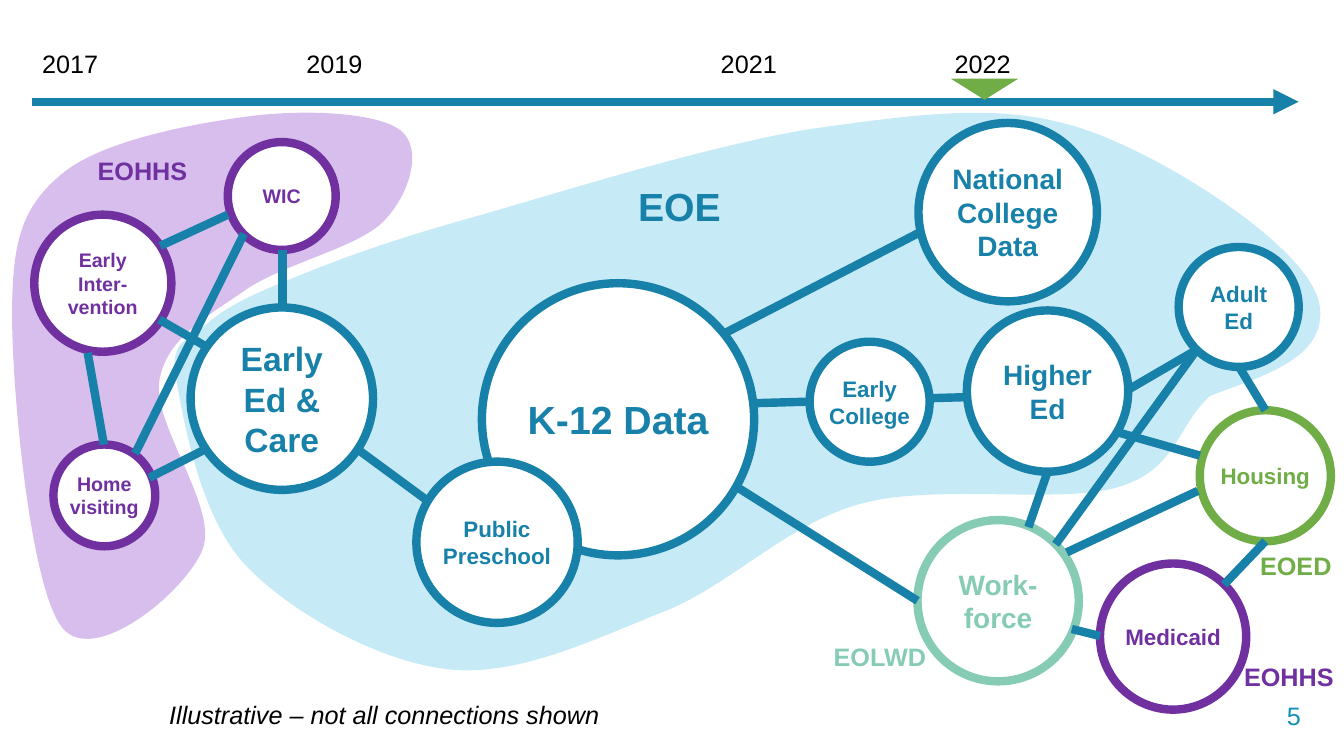
from lxml.etree import SubElement
from pptx import Presentation
from pptx.dml.color import RGBColor
from pptx.enum.shapes import MSO_CONNECTOR, MSO_SHAPE
from pptx.enum.text import MSO_ANCHOR, PP_ALIGN
from pptx.oxml.ns import qn
from pptx.util import Inches, Pt

BLUE, PURPLE, GREEN, MINT = "1781A9", "7030A0", "70AD47", "86CCB5"
RULE_BLUE, BLACK, WHITE = "1590BB", "000000", "FFFFFF"
LINE_WIDTH = 6

EOE_BOX = (1.73, 1.12, 11.36, 5.53)
EOE_START = (1.75, 3.77)
EOE_CURVES = [
    ((1.68, 3.38), (1.84, 3.4), (2.02, 3.24)),
    ((2.2, 3.08), (2.39, 2.97), (2.83, 2.79)),
    ((3.27, 2.61), (3.75, 2.42), (4.64, 2.17)),
    ((5.53, 1.92), (7.15, 1.4), (8.18, 1.26)),
    ((9.21, 1.12), (10.01, 1.01), (10.83, 1.31)),
    ((11.65, 1.61), (13.02, 2.49), (13.09, 3.04)),
    ((13.17, 3.59), (12.41, 3.76), (12, 3.93)),
    ((11.67, 4.23), (11.68, 4.65), (11.1, 4.83)),
    ((10.52, 5.01), (9.28, 4.79), (8.53, 5)),
    ((7.78, 5.21), (7.26, 5.8), (6.58, 6.07)),
    ((5.9, 6.34), (5.13, 6.72), (4.44, 6.64)),
    ((3.75, 6.56), (2.88, 6.08), (2.43, 5.6)),
    ((1.98, 5.12), (1.82, 4.16), (1.75, 3.77)),
]
EOHHS_BOX = (0.12, 1.12, 3.97, 5.22)
EOHHS_START = (3.8, 2.2)
EOHHS_CURVES = [
    ((3.54, 2.46), (2.8, 2.62), (2.43, 2.88)),
    ((2.06, 3.14), (1.65, 3.35), (1.58, 3.78)),
    ((1.51, 4.21), (2.17, 5.04), (2.01, 5.45)),
    ((1.85, 5.86), (0.94, 6.62), (0.62, 6.23)),
    ((0.3, 5.84), (0.12, 3.88), (0.12, 3.13)),
    ((0.12, 2.38), (0.22, 2.05), (0.62, 1.72)),
    ((1.02, 1.39), (1.94, 1.22), (2.5, 1.15)),
    ((3.06, 1.08), (3.77, 1.12), (3.98, 1.3)),
    ((4.2, 1.48), (4.06, 1.94), (3.8, 2.2)),
]
CORE_CIRCLES = [
    ("K-12 Data", 4.78, 2.81, 2.7, 28, BLUE),
    ("Work-force", 9.1, 5.16, 1.6, 20, MINT),
    ("Early Ed & Care", 1.89, 3.05, 1.81, 24, BLUE),
    ("Early Inter-vention", 0.34, 2.13, 1.36, 14, PURPLE),
    ("Home visiting", 0.53, 4.41, 1.01, 14, PURPLE),
    ("WIC", 2.26, 1.41, 1.07, 14, PURPLE),
    ("Public Preschool", 4.13, 4.58, 1.6, 16, BLUE),
]
CORE_LINKS = [
    (2.8, 2.48, 2.8, 3.05), (1.58, 3.17, 2.03, 3.43),
    (1.48, 4.74, 2.03, 4.46), (3.55, 4.46, 4.23, 4.96),
    (7.18, 3.31, 9.21, 2.26), (7.29, 4.82, 9.1, 5.96),
    (7.48, 4, 9.59, 3.94), (10.2, 5.23, 10.39, 4.68),
]
OUTER_CIRCLES = [
    ("National College\nData", 9.11, 1.22, 1.77, 20, BLUE),
    ("Higher Ed", 9.59, 3.08, 1.6, 20, BLUE),
    ("Early College", 8.03, 3.39, 1.19, 16, BLUE),
    ("Adult Ed", 11.69, 2.45, 1.19, 16, BLUE),
    ("Housing", 11.9, 4.07, 1.3, 16, GREEN),
    ("Medicaid", 10.91, 5.59, 1.45, 16, PURPLE),
]
OUTER_LINKS = [
    (11.2, 3.86, 11.87, 3.47), (11.09, 4.29, 11.9, 4.52),
    (10.63, 6.24, 10.91, 6.31), (10.58, 5.48, 11.88, 4.87),
    (10.47, 5.4, 11.87, 3.47), (12.55, 4.07, 12.29, 3.64),
    (12.14, 5.8, 12.55, 5.37), (2.26, 2.13, 1.59, 2.44),
    (0.87, 3.5, 1.03, 4.41), (2.42, 2.32, 1.34, 4.5),
]
AGENCIES = [
    ("EOHHS", 0.87, 1.49, 1.11, 0.4, 18, PURPLE),
    ("EOLWD", 8.17, 6.31, 1.23, 0.4, 18, MINT),
    ("EOED", 12.4, 5.41, 1.06, 0.4, 18, GREEN),
    ("EOHHS", 12.24, 6.51, 1.23, 0.4, 18, PURPLE),
    ("EOE", 6.23, 1.76, 1.21, 0.57, 28, BLUE),
]
YEARS = [("2017", 0), ("2019", 2.62), ("2021", 6.73), ("2022", 9.05)]


def color(value):
    """Turn a hex string into a colour."""
    return RGBColor.from_string(value)


def write(shape, text, size=18, ink=BLACK, bold=False, italic=False,
          align=PP_ALIGN.LEFT, anchor=MSO_ANCHOR.TOP, wrap=True):
    """Fill a shape with formatted text, one paragraph per line."""
    frame = shape.text_frame
    frame.word_wrap = wrap
    frame.vertical_anchor = anchor
    for index, line in enumerate(text.split("\n")):
        para = frame.paragraphs[0] if index == 0 else frame.add_paragraph()
        para.alignment = align
        span = para.add_run()
        span.text = line
        font = span.font
        font.name, font.size, font.bold, font.italic = "Arial", Pt(size), bold, italic
        font.color.rgb = color(ink)


def label(page, box, text, **style):
    """Place a text box."""
    shape = page.shapes.add_textbox(*map(Inches, box))
    write(shape, text, **style)


def paint(shape, fill, line=None, width=LINE_WIDTH):
    """Give a shape a flat fill and an optional outline."""
    shape.shadow.inherit = False
    shape.fill.solid()
    shape.fill.fore_color.rgb = color(fill)
    if line:
        shape.line.color.rgb = color(line)
        shape.line.width = Pt(width)
    else:
        shape.line.fill.background()


def link(page, begin_x, begin_y, end_x, end_y, arrow=False):
    """Draw a thick blue connector, with an optional arrowhead."""
    ends = map(Inches, (begin_x, begin_y, end_x, end_y))
    line = page.shapes.add_connector(MSO_CONNECTOR.STRAIGHT, *ends)
    line.line.color.rgb = color(BLUE)
    line.line.width = Pt(LINE_WIDTH)
    if arrow:
        SubElement(line.line._get_or_add_ln(), qn("a:tailEnd"), type="triangle")
    SubElement(line._element.spPr, qn("a:effectLst"))


def blob(page, box, start, curves, fill):
    """Draw a closed outline of cubic curves that fills the box."""
    left, top, width, height = map(Inches, box)
    right, bottom = left + width, top + height
    builder = page.shapes.build_freeform(left, top, scale=1.0)
    builder.add_line_segments([(right, top), (right, bottom), (left, bottom)])
    shape = builder.convert_to_shape()
    outline = next(shape._element.iter(qn("a:path")))
    for child in list(outline):
        outline.remove(child)
    steps = [("a:moveTo", [start])] + [("a:cubicBezTo", curve) for curve in curves]
    for tag, points in steps:
        step = SubElement(outline, qn(tag))
        for x, y in points:
            SubElement(step, qn("a:pt"),
                       x=str(Inches(x) - left), y=str(Inches(y) - top))
    SubElement(outline, qn("a:close"))
    paint(shape, fill)


def circle(page, left, top, size, text, points, ink):
    """Draw one outlined data source with its name."""
    shape = page.shapes.add_shape(
        MSO_SHAPE.OVAL, *map(Inches, (left, top, size, size)))
    paint(shape, WHITE, ink)
    shape.text_frame.margin_left = shape.text_frame.margin_right = 0
    write(shape, text, size=points, ink=ink, bold=True,
          align=PP_ALIGN.CENTER, anchor=MSO_ANCHOR.MIDDLE)


def network(page, box):
    """Place data sources, links and agency names."""
    x, y = box[:2]
    for circles, links in ((CORE_CIRCLES, CORE_LINKS), (OUTER_CIRCLES, OUTER_LINKS)):
        for text, left, top, size, points, ink in circles:
            circle(page, x + left, y + top, size, text, points, ink)
        for x1, y1, x2, y2 in links:
            link(page, x + x1, y + y1, x + x2, y + y2)
    for text, left, top, width, height, size, ink in AGENCIES:
        label(page, (x + left, y + top, width, height), text,
              size=size, ink=ink, bold=True)


def timeline(page, box):
    """Place the year arrow, the years and the current-year marker."""
    left, top, width, height = box
    axis = top + height
    link(page, left, axis, left + width, axis, arrow=True)
    for year, offset in YEARS:
        label(page, (left + offset, top, 0.79, 0.4), year, wrap=False)
    marker = page.shapes.add_shape(
        MSO_SHAPE.ISOSCELES_TRIANGLE,
        *map(Inches, (left + 9.11, top + 0.35, 0.67, 0.21)))
    marker.rotation = 180
    paint(marker, GREEN)


def footer(page, box):
    """Place the footnote and the page number."""
    left, top, width, height = box
    label(page, (left, top, 6.17, 0.4),
          "Illustrative – not all connections shown", italic=True)
    label(page, (left + width - 3, top, 3, height), "5", ink=RULE_BLUE,
          align=PP_ALIGN.RIGHT, anchor=MSO_ANCHOR.MIDDLE)


def main():
    """Build the slide and save it."""
    deck = Presentation()
    deck.slide_width, deck.slide_height = Inches(13.33), Inches(7.5)
    page = deck.slides.add_slide(deck.slide_layouts[6])
    blob(page, EOE_BOX, EOE_START, EOE_CURVES, "C7EAF7")
    blob(page, EOHHS_BOX, EOHHS_START, EOHHS_CURVES, "D8BEEC")
    network(page, (0, 0, 13.33, 7.5))
    timeline(page, (0.32, 0.43, 12.56, 0.58))
    footer(page, (1.58, 6.89, 11.42, 0.42))
    deck.save("out.pptx")


if __name__ == "__main__":
    main()
